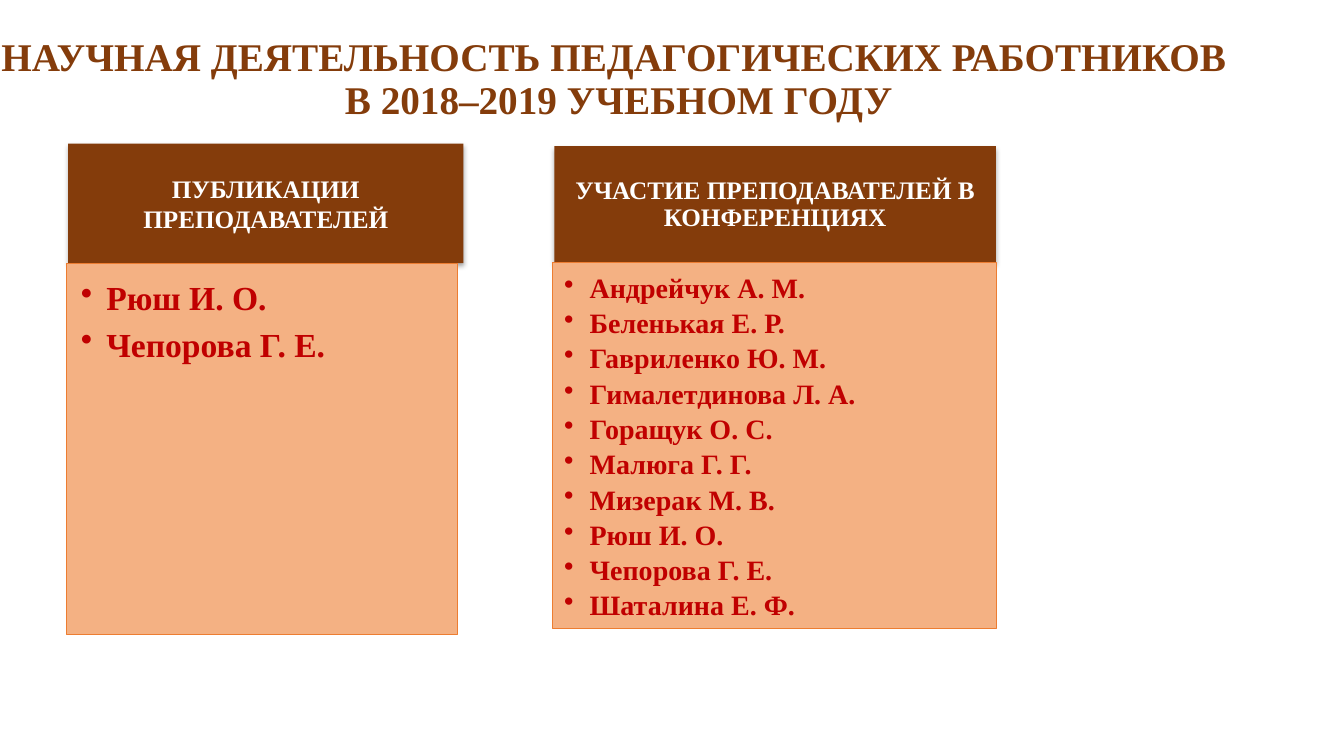
from lxml import etree
from pptx import Presentation
from pptx import util as u
from pptx.dml.color import RGBColor
from pptx.enum import shapes, text
from pptx.oxml.ns import qn

COLORS = {
    "brown": "843C0B",
    "peach": "F4B183",
    "orange": "ED7D31",
    "red": "C00000",
    "white": "FFFFFF",
    "shadow": "000000",
}


class SlideBuilder:
    font_name = "Times New Roman"
    bullet_indent = u.Cm(0.64)

    def __init__(self, slide):
        self.slide = slide

    def color(self, name):
        return RGBColor.from_string(COLORS[name])

    def rectangle(self, box, fill):
        shape = self.slide.shapes.add_shape(
            shapes.MSO_SHAPE.RECTANGLE, *[u.Cm(length) for length in box])
        shape.shadow.inherit = False
        shape.fill.solid()
        shape.fill.fore_color.rgb = self.color(fill)
        shape.line.fill.background()
        return shape

    def set_up_frame(self, frame, insets, anchor):
        frame.word_wrap = True
        frame.vertical_anchor = anchor
        (frame.margin_left, frame.margin_top,
         frame.margin_right, frame.margin_bottom) = [u.Cm(inset) for inset in insets]

    def format_paragraph(self, paragraph, size, color, alignment, line_spacing):
        paragraph.alignment = alignment
        paragraph.line_spacing = line_spacing
        for run in paragraph.runs:
            run.font.name = self.font_name
            run.font.size = u.Pt(size)
            run.font.bold = True
            run.font.color.rgb = self.color(color)

    def add_shadow(self, shape):
        effects = shape._element.spPr.find(qn("a:effectLst"))
        shadow = etree.SubElement(
            effects, qn("a:outerShdw"), blurRad=str(u.Pt(3.5)),
            dist=str(u.Pt(2.2)), dir="5400000", algn="t", rotWithShape="0")
        color = etree.SubElement(shadow, qn("a:srgbClr"), val=COLORS["shadow"])
        etree.SubElement(color, qn("a:alpha"), val="32000")

    def add_bullet(self, paragraph):
        properties = paragraph._p.get_or_add_pPr()
        properties.set("marL", str(self.bullet_indent))
        properties.set("indent", str(-self.bullet_indent))
        etree.SubElement(properties, qn("a:buChar"), char="•")

    def title(self, box, wording):
        shape = self.slide.shapes.add_textbox(*[u.Cm(length) for length in box])
        frame = shape.text_frame
        self.set_up_frame(frame, (0.25, 0.13, 0.25, 0.13), text.MSO_ANCHOR.MIDDLE)
        frame.paragraphs[0].text = wording
        self.format_paragraph(frame.paragraphs[0], 28, "brown", text.PP_ALIGN.CENTER, 0.9)

    def header(self, box, wording, line_spacing):
        shape = self.rectangle(box, "brown")
        self.add_shadow(shape)
        frame = shape.text_frame
        self.set_up_frame(frame, (0.36, 0.2, 0.36, 0.2), text.MSO_ANCHOR.MIDDLE)
        frame.text = wording
        self.format_paragraph(frame.paragraphs[0], 18, "white",
                              text.PP_ALIGN.CENTER, line_spacing)

    def name_list(self, box, names, size, insets, line_spacing):
        shape = self.rectangle(box, "peach")
        shape.line.color.rgb = self.color("orange")
        shape.line.width = u.Pt(0.5)
        frame = shape.text_frame
        self.set_up_frame(frame, insets, text.MSO_ANCHOR.TOP)
        frame.text = "\n".join(names)
        for paragraph in frame.paragraphs:
            self.add_bullet(paragraph)
            paragraph.space_after = u.Pt(round(0.18 * size, 1))
            self.format_paragraph(paragraph, size, "red", text.PP_ALIGN.LEFT, line_spacing)


def main():
    presentation = Presentation()
    presentation.slide_width = u.Cm(33.87)
    presentation.slide_height = u.Cm(19.05)
    builder = SlideBuilder(presentation.slides.add_slide(presentation.slide_layouts[6]))

    # Title
    builder.title((-1.24, 0.43, 33.66, 3.18),
                  "НАУЧНАЯ ДЕЯТЕЛЬНОСТЬ ПЕДАГОГИЧЕСКИХ РАБОТНИКОВ \v"
                  "В 2018–2019 УЧЕБНОМ ГОДУ")

    # Publications
    builder.header((1.72, 3.62, 9.96, 3.01), "ПУБЛИКАЦИИ ПРЕПОДАВАТЕЛЕЙ", 1.0)
    builder.name_list((1.68, 6.63, 9.86, 9.35), ["Рюш И. О.", "Чепорова Г. Е."],
                      24, (0.36, 0.36, 0.48, 0.53), 1.0)

    # Conferences
    builder.header((13.97, 3.68, 11.13, 2.95),
                   "УЧАСТИЕ ПРЕПОДАВАТЕЛЕЙ В КОНФЕРЕНЦИЯХ", 0.9)
    builder.name_list((13.92, 6.61, 11.18, 9.22), [
        "Андрейчук А. М.",
        "Беленькая Е. Р.",
        "Гавриленко Ю. М.",
        "Гималетдинова Л. А.",
        "Горащук О. С.",
        "Малюга Г. Г.",
        "Мизерак М. В.",
        "Рюш И. О.",
        "Чепорова Г. Е.",
        "Шаталина Е. Ф.",
    ], 20, (0.3, 0.3, 0.41, 0.43), 0.9)

    presentation.save("out.pptx")


if __name__ == "__main__":
    main()
